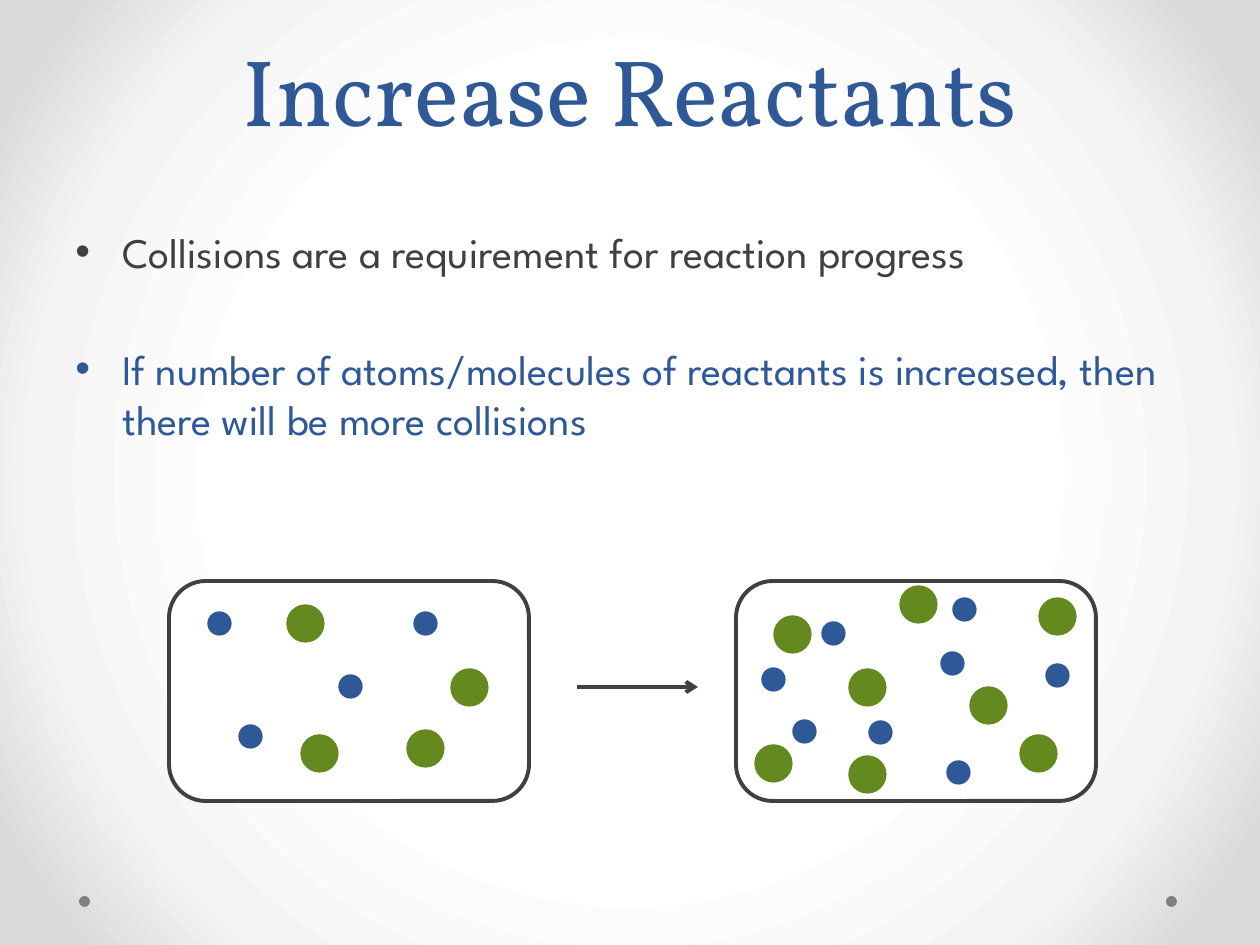
import pptx
import pptx.dml.color
import pptx.enum.shapes
import pptx.enum.text
import pptx.oxml
import pptx.oxml.ns
import pptx.util

SCALE = 914400 // 126  # EMU in one px
BLUE, GREEN, GRAY, DARK, WHITE = "2F5897", "63891F", "808080", "404040", "FFFFFF"
SMALL, LARGE = 23, 37  # particle diameters
NAMESPACE = pptx.oxml.ns.nsdecls("a")
SHAPES = pptx.enum.shapes.MSO_SHAPE

# Particle centres, relative to their container
FEW_BLUE = [(50, 42), (256, 42), (81, 155), (181, 105)]
FEW_GREEN = [(256, 167), (150, 172), (136, 42), (300, 106)]
MANY_BLUE = [(37, 98), (68, 150), (97, 52), (144, 151),
             (216, 82), (321, 94), (222, 191), (228, 28)]
MANY_GREEN = [(56, 53), (321, 35), (182, 23), (131, 193),
              (131, 106), (252, 124), (37, 182), (302, 172)]


def px(length):
    return pptx.util.Emu(length * SCALE)


def color(value):
    return pptx.dml.color.RGBColor.from_string(value)


def write_text(paragraph, text, *, font, size, fill, align=None, line=None, before=0):
    run = paragraph.add_run()
    run.text = text
    run.font.name = font
    run.font.size = pptx.util.Pt(size)
    run.font.color.rgb = color(fill)
    paragraph.alignment = align
    paragraph.space_before = pptx.util.Pt(before)
    if line:
        paragraph.line_spacing = pptx.util.Pt(line)


def add_bullet(paragraph, indent):
    properties = paragraph._p.get_or_add_pPr()
    properties.set("marL", str(px(indent)))
    properties.set("indent", str(-px(indent)))
    for tag in ('a:buFont {} typeface="Arial"', 'a:buChar {} char="•"'):
        properties.append(pptx.oxml.parse_xml(f"<{tag.format(NAMESPACE)}/>"))


def add_shape(slide, kind, box, fill, outline=None, width=0.75):
    shape = slide.shapes.add_shape(kind, *map(px, box))
    shape.shadow.inherit = False
    shape.fill.solid()
    shape.fill.fore_color.rgb = color(fill)
    if outline:
        shape.line.color.rgb = color(outline)
        shape.line.width = pptx.util.Pt(width)
    else:
        shape.line.fill.background()
    return shape


def add_dot(slide, x, y, diameter, fill, outline=None):
    corner = diameter // 2
    add_shape(slide, SHAPES.OVAL, (x - corner, y - corner, diameter, diameter), fill, outline)


def set_background(slide):
    fill = slide.background.fill
    fill.gradient()
    gradient = slide._element.find(".//" + pptx.oxml.ns.qn("a:gradFill"))
    stops = "".join(
        f'<a:gs pos="{position * 1000}"><a:srgbClr val="{value}"/></a:gs>'
        for position, value in ((50, WHITE), (76, "F4F4F4"), (92, "DADADA")))
    gradient.getparent().replace(gradient, pptx.oxml.parse_xml(
        f'<a:gradFill {NAMESPACE} rotWithShape="1"><a:gsLst>{stops}</a:gsLst>'
        '<a:path path="circle"><a:fillToRect l="50000" t="50000" r="50000" b="50000"/>'
        "</a:path></a:gradFill>"))


def place_title(slide, left, top, width, height):
    title = slide.shapes.title
    title.left, title.top, title.width, title.height = map(px, (left, top, width, height))
    frame = title.text_frame
    frame.auto_size = pptx.enum.text.MSO_AUTO_SIZE.NONE
    frame.vertical_anchor = pptx.enum.text.MSO_ANCHOR.BOTTOM
    write_text(frame.paragraphs[0], "Increase Reactants", font="Vollkorn", size=54,
               fill=BLUE, align=pptx.enum.text.PP_ALIGN.CENTER, line=58)


def place_bullets(slide, left, top, width, height):
    frame = slide.shapes.add_textbox(*map(px, (left, top, width, height))).text_frame
    frame.word_wrap = True
    first, second = frame.paragraphs[0], frame.add_paragraph()
    bullets = (
        (first, "Collisions are a requirement for reaction progress", DARK, 5),
        (second, "If number of atoms/molecules of reactants is increased, "
                 "then there will be more collisions", BLUE, 38))
    for paragraph, text, fill, before in bullets:
        write_text(paragraph, text, font="League Spartan", size=24, fill=fill, before=before)
        add_bullet(paragraph, 47)


def place_container(slide, left, top, width, height, blue, green):
    add_shape(slide, SHAPES.ROUNDED_RECTANGLE, (left, top, width, height), WHITE, DARK, 2.25)
    for centers, diameter, fill in ((green, LARGE, GREEN), (blue, SMALL, BLUE)):
        for x, y in centers:
            add_dot(slide, left + x, top + y, diameter, fill, fill)


def place_arrow(slide, left, y, width):
    arrow = slide.shapes.add_connector(
        pptx.enum.shapes.MSO_CONNECTOR.STRAIGHT, px(left), px(y), px(left + width), px(y))
    arrow.line.color.rgb = color(DARK)
    arrow.line.width = pptx.util.Pt(2.25)
    arrow.line._get_or_add_ln().append(
        pptx.oxml.parse_xml(f'<a:tailEnd {NAMESPACE} type="arrow"/>'))
    arrow._element.spPr.append(pptx.oxml.parse_xml(f"<a:effectLst {NAMESPACE}/>"))


def main():
    presentation = pptx.Presentation()
    presentation.slide_width = px(1260)
    presentation.slide_height = px(945)
    slide = presentation.slides.add_slide(presentation.slide_layouts[5])
    set_background(slide)

    # Footer dots
    for x in (84, 1171):
        add_dot(slide, x, 901, 11, GRAY)

    # Text
    place_title(slide, 63, 0, 1134, 152)
    place_bullets(slide, 63, 220, 1134, 624)

    # Few particles, then many
    place_arrow(slide, 577, 687, 121)
    place_container(slide, 169, 581, 360, 220, FEW_BLUE, FEW_GREEN)
    place_container(slide, 736, 581, 360, 220, MANY_BLUE, MANY_GREEN)

    presentation.save("out.pptx")


if __name__ == "__main__":
    main()
